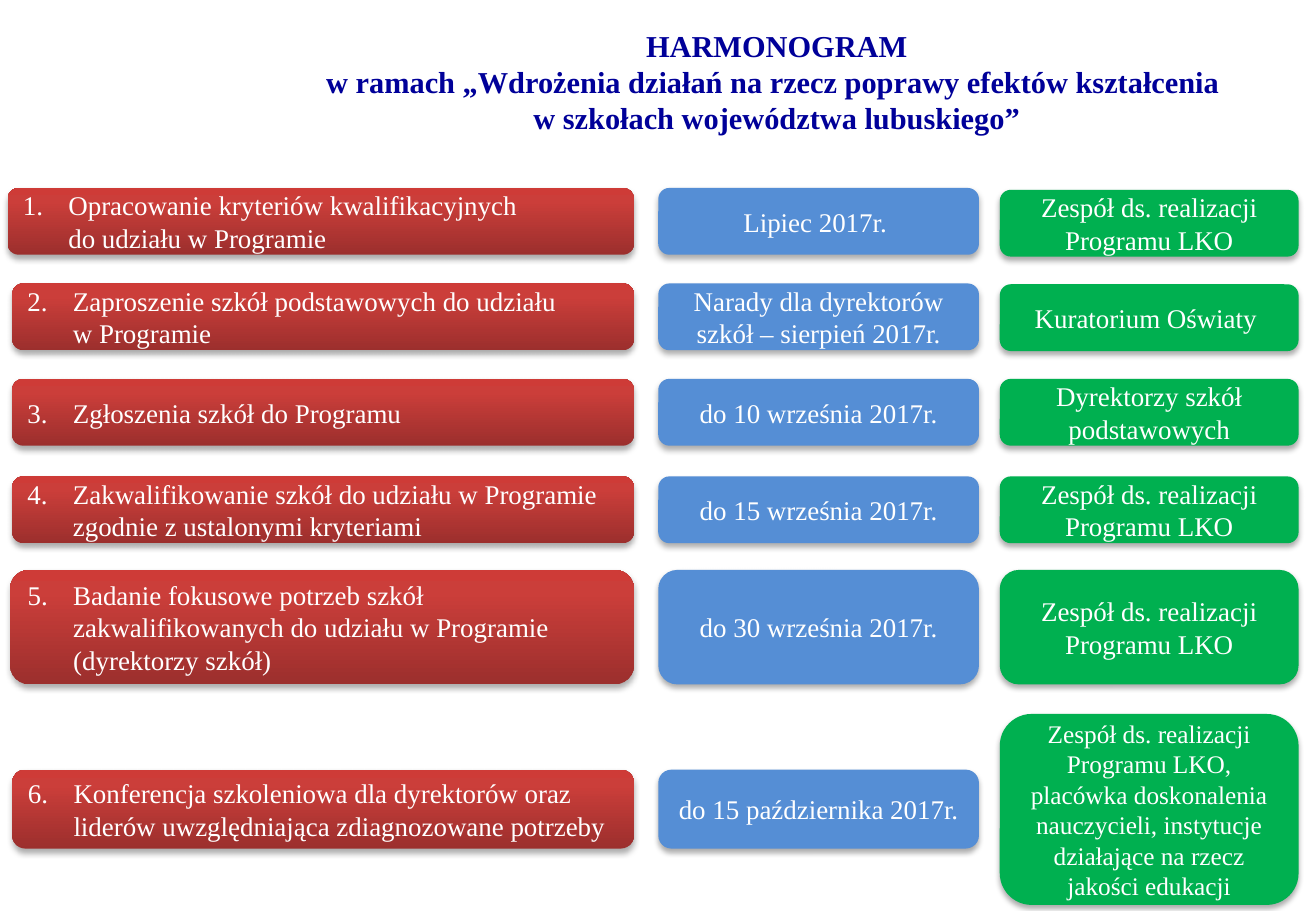
from copy import deepcopy

from lxml import etree
from pptx import Presentation
from pptx.dml.color import RGBColor
from pptx.enum.shapes import MSO_SHAPE
from pptx.enum.text import MSO_ANCHOR, PP_ALIGN
from pptx.oxml.ns import qn
from pptx.util import Pt

ROUNDED = MSO_SHAPE.ROUNDED_RECTANGLE
MIDDLE = MSO_ANCHOR.MIDDLE
LEFT, CENTER = PP_ALIGN.LEFT, PP_ALIGN.CENTER

FONT = "Times New Roman"
COLORS = {
    "title": "000099",
    "text": "FFFFFF",
    "date": "558ED5",
    "owner": "00B050",
    "shadow": "000000",
}
TASK_GRADIENT = [(0, "9C2F2D"), (0.8, "CB3E3A"), (1, "CE3B37")]

# Columns: left edge and width
TASK_RIGHT = 375.8
DATE_LEFT, DATE_WIDTH = 390.2, 190.1
OWNER_LEFT, OWNER_WIDTH = 592.6, 177.1
NUMBER_INDENT = 27

TITLE = (
    "HARMONOGRAM\n"
    "w ramach „Wdrożenia działań na rzecz poprawy efektów kształcenia \n"
    "w szkołach województwa lubuskiego”"
)
TEAM = "Zespół ds. realizacji Programu LKO"

# Rows: top, height, left edge of the task, task, date, owner
STAGES = [
    (111.4, 39.6, 4.5, "Opracowanie kryteriów kwalifikacyjnych \ndo udziału w Programie",
     "Lipiec 2017r. ", TEAM),
    (168, 39.6, 7.2, "Zaproszenie szkół podstawowych do udziału \nw Programie",
     "Narady dla dyrektorów szkół – sierpień 2017r.", "Kuratorium Oświaty "),
    (224.6, 39.6, 7.2, "Zgłoszenia szkół do Programu",
     "do 10 września 2017r.", "Dyrektorzy szkół podstawowych"),
    (282.4, 39.6, 7.2,
     "Zakwalifikowanie szkół do udziału w Programie zgodnie z ustalonymi kryteriami",
     "do 15 września 2017r.", TEAM),
    (337.8, 67.9, 6, "Badanie fokusowe potrzeb szkół zakwalifikowanych "
     "do udziału w Programie \n(dyrektorzy szkół)",
     "do 30 września 2017r.", TEAM),
    (456.2, 46.8, 7.2, "Konferencja szkoleniowa dla dyrektorów oraz \n"
     "liderów uwzględniająca zdiagnozowane potrzeby",
     "do 15 października 2017r.",
     "Zespół ds. realizacji Programu LKO, placówka doskonalenia nauczycieli, "
     "instytucje działające na rzecz jakości edukacji"),
]
# Owner boxes that leave their row: top, height, text size
OWNER_PLACES = {1: (112.5, 39.6, 16), 2: (168.5, 39.6, 16), 6: (423.2, 113.2, 15)}


def write(shape, text, size=16, color="text", bold=False, align=CENTER, number=None):
    frame = shape.text_frame
    frame.word_wrap = True
    frame.vertical_anchor = MIDDLE
    paragraph = frame.paragraphs[0]
    paragraph.alignment = align
    if number:
        properties = paragraph._p.get_or_add_pPr()
        properties.set("marL", str(Pt(NUMBER_INDENT)))
        properties.set("indent", str(-Pt(NUMBER_INDENT)))
        etree.SubElement(properties, qn("a:buFont"), typeface="+mj-lt")
        etree.SubElement(properties, qn("a:buAutoNum"), type="arabicPeriod",
                         startAt=str(number))
    paragraph.text = text
    for run in paragraph.runs:
        run.font.name = FONT
        run.font.size = Pt(size)
        run.font.bold = bold
        run.font.color.rgb = RGBColor.from_string(COLORS[color])
    # Line breaks keep the format of the text around them
    for line_break in paragraph._p.findall(qn("a:br")):
        line_break.append(deepcopy(paragraph.runs[0]._r.rPr))


def add_shadow(shape):
    shape.shadow.inherit = False
    effects = shape._element.spPr.find(qn("a:effectLst"))
    outer = etree.SubElement(effects, qn("a:outerShdw"), blurRad=str(Pt(3.5)),
                             dist=str(Pt(2.2)), dir="5400000", rotWithShape="0")
    tint = etree.SubElement(outer, qn("a:srgbClr"), val=COLORS["shadow"])
    etree.SubElement(tint, qn("a:alpha"), val="32000")


def fill_gradient(shape, stops):
    shape.fill.gradient()
    shape.fill.gradient_angle = 90
    stop_list = shape._element.spPr.find(".//" + qn("a:gsLst"))
    stop_list.append(deepcopy(stop_list[-1]))
    for stop, (position, color) in zip(shape.fill.gradient_stops, stops):
        stop.position = position
        stop.color.rgb = RGBColor.from_string(color)


def add_box(slide, left, top, width, height, fill=None):
    box = slide.shapes.add_shape(ROUNDED, Pt(left), Pt(top), Pt(width), Pt(height))
    box.line.fill.background()
    if fill:
        box.fill.solid()
        box.fill.fore_color.rgb = RGBColor.from_string(COLORS[fill])
    else:
        fill_gradient(box, TASK_GRADIENT)
    add_shadow(box)
    return box


def add_stage(slide, number, stage):
    top, height, task_left, task, date, owner = stage
    owner_top, owner_height, owner_size = OWNER_PLACES.get(number, (top, height, 16))

    task_box = add_box(slide, task_left, top, TASK_RIGHT - task_left, height)
    write(task_box, task, align=LEFT, number=number)

    date_box = add_box(slide, DATE_LEFT, top, DATE_WIDTH, height, "date")
    write(date_box, date)

    owner_box = add_box(slide, OWNER_LEFT, owner_top, OWNER_WIDTH, owner_height, "owner")
    write(owner_box, owner, size=owner_size)


def main():
    deck = Presentation()
    deck.slide_width, deck.slide_height = Pt(780), Pt(540)
    slide = deck.slides.add_slide(deck.slide_layouts[6])

    # Title
    title = slide.shapes.add_textbox(Pt(152.6), Pt(11.5), Pt(615.6), Pt(73.4))
    write(title, TITLE, size=18, color="title", bold=True)

    # Schedule
    for number, stage in enumerate(STAGES, 1):
        add_stage(slide, number, stage)

    deck.save("out.pptx")


if __name__ == "__main__":
    main()
